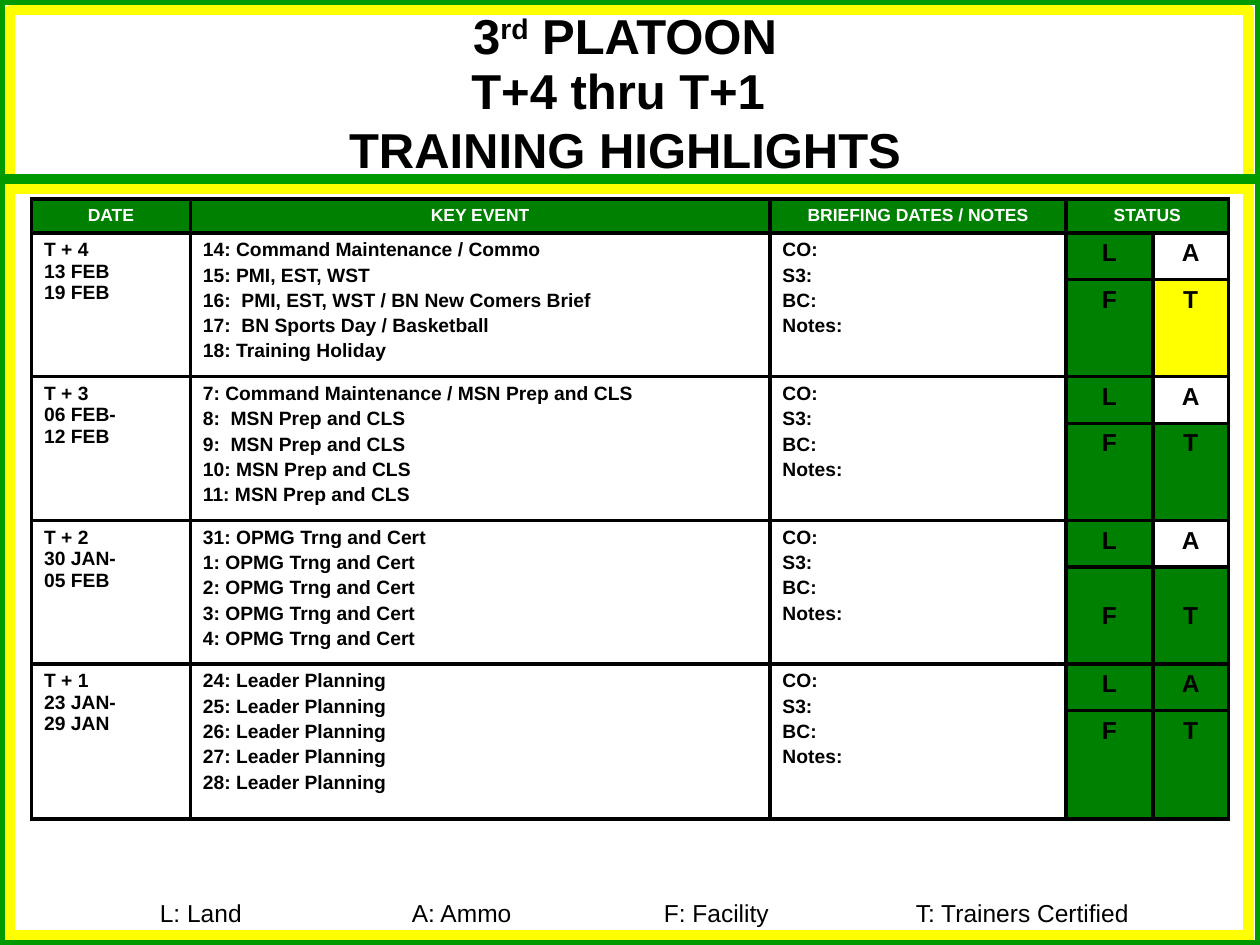
from lxml.etree import SubElement
from pptx import Presentation
from pptx.dml.color import RGBColor
from pptx.enum.shapes import MSO_CONNECTOR, MSO_SHAPE
from pptx.enum.text import MSO_ANCHOR, PP_ALIGN
from pptx.oxml.ns import qn
from pptx.util import Inches, Pt

COLORS = {"black": "000000", "white": "FFFFFF", "yellow": "FFFF00",
          "frame": "009900", "green": "008000"}

FRAMES = [((0.08, 0.08, 9.83, 7.42), "yellow"), ((0, 0, 10, 7.5), "frame")]
RULES = [(0.08, 9.92, 7.42, "yellow"), (0.08, 9.92, 1.5, "yellow"), (0, 10, 1.42, "frame")]

LEGEND = ["L: Land", "A: Ammo", "F: Facility", "T: Trainers Certified"]
HEADERS = ["DATE", "KEY EVENT", "BRIEFING DATES / NOTES", "STATUS"]
NOTES = ["CO:", "S3:", "BC:", "Notes:"]
STATUS_LETTERS = ["L", "A", "F", "T"]
# dates, key events, fills of L A F T, anchor of the lower status cells
WEEKS = [
    (["T + 4", "13 FEB", "19 FEB"],
     ["14: Command Maintenance / Commo", "15: PMI, EST, WST",
      "16:  PMI, EST, WST / BN New Comers Brief",
      "17:  BN Sports Day / Basketball", "18: Training Holiday"],
     ["green", None, "green", "yellow"], MSO_ANCHOR.TOP),
    (["T + 3", "06 FEB-", "12 FEB"],
     ["7: Command Maintenance / MSN Prep and CLS", "8:  MSN Prep and CLS",
      "9:  MSN Prep and CLS", "10: MSN Prep and CLS", "11: MSN Prep and CLS"],
     ["green", None, "green", "green"], MSO_ANCHOR.TOP),
    (["T + 2", "30 JAN-", "05 FEB"],
     [f"{day}: OPMG Trng and Cert" for day in (31, 1, 2, 3, 4)],
     ["green", "white", "green", "green"], MSO_ANCHOR.MIDDLE),
    (["T + 1", "23 JAN-", "29 JAN"],
     [f"{day}: Leader Planning" for day in range(24, 29)],
     ["green", "green", "green", "green"], MSO_ANCHOR.TOP),
]
COLUMN_WIDTHS = [1.26, 4.6, 2.35, 0.69, 0.6]
ROW_HEIGHTS = [0.27] + [0.37, 0.77] * 3 + [0.37, 0.86]


def rgb(name):
    return RGBColor.from_string(COLORS[name])


def add_run(paragraph, text, size, color="black", bold=True):
    run = paragraph.add_run()
    run.text = text
    run.font.name = "Arial"
    run.font.size = Pt(size)
    run.font.bold = bold
    run.font.color.rgb = rgb(color)
    return run


def add_text_box(slide, left, top, width, height):
    box = slide.shapes.add_textbox(Inches(left), Inches(top), Inches(width), Inches(height))
    box.text_frame.word_wrap = True
    return box.text_frame


def add_borders(cell):
    properties = cell._tc.get_or_add_tcPr()
    for position, side in enumerate(("a:lnL", "a:lnR", "a:lnT", "a:lnB")):
        line = properties.makeelement(qn(side), {"w": str(Pt(2.25))})
        fill = SubElement(line, qn("a:solidFill"))
        SubElement(fill, qn("a:srgbClr"), val=COLORS["black"])
        properties.insert(position, line)


def fill_cell(cell, lines, size, fill=None, color="black", align=PP_ALIGN.LEFT,
              space=0, anchor=MSO_ANCHOR.TOP):
    cell.vertical_anchor = anchor
    if fill:
        cell.fill.solid()
        cell.fill.fore_color.rgb = rgb(fill)
    for index, line in enumerate(lines):
        frame = cell.text_frame
        paragraph = frame.add_paragraph() if index else frame.paragraphs[0]
        paragraph.alignment = align
        if index and space:
            paragraph.space_before = Pt(space)
        add_run(paragraph, line, size, color)


def add_frame(slide):
    for place, color in FRAMES:
        frame = slide.shapes.add_shape(MSO_SHAPE.RECTANGLE, *map(Inches, place))
        frame.shadow.inherit = False
        frame.fill.background()
        frame.line.color.rgb = rgb(color)
        frame.line.width = Pt(6)
    for start, end, y, color in RULES:
        rule = slide.shapes.add_connector(
            MSO_CONNECTOR.STRAIGHT, Inches(start), Inches(y), Inches(end), Inches(y))
        rule.line.color.rgb = rgb(color)
        rule.line.width = Pt(6)
        SubElement(rule._element.spPr, qn("a:effectLst"))


def add_title(slide):
    frame = add_text_box(slide, 1.75, 0.19, 6.42, 1.28)
    frame.vertical_anchor = MSO_ANCHOR.MIDDLE
    platoon = frame.paragraphs[0]
    platoon.line_spacing = 0.5
    add_run(platoon, "3", 28)
    add_run(platoon, "rd", 28).font._element.set("baseline", "30000")
    add_run(platoon, " PLATOON", 28)
    highlights = frame.add_paragraph()
    add_run(highlights, "T+4 thru T+1 ", 28)
    highlights.add_line_break()
    add_run(highlights, "TRAINING HIGHLIGHTS", 28)
    for paragraph in frame.paragraphs:
        paragraph.alignment = PP_ALIGN.CENTER


def add_legend(slide):
    paragraph = add_text_box(slide, 1.17, 7.08, 8.08, 0.34).paragraphs[0]
    tabs = SubElement(paragraph._p.get_or_add_pPr(), qn("a:tabLst"))
    for index in range(1, len(LEGEND)):
        SubElement(tabs, qn("a:tab"), pos=str(Inches(2 * index)), algn="l")
    add_run(paragraph, "\t".join(LEGEND), 14, bold=False)


def add_schedule(slide):
    table = slide.shapes.add_table(
        len(ROW_HEIGHTS), len(COLUMN_WIDTHS), Inches(0.25), Inches(1.58),
        Inches(sum(COLUMN_WIDTHS)), Inches(sum(ROW_HEIGHTS))).table
    table.first_row = table.horz_banding = False
    for column, width in zip(table.columns, COLUMN_WIDTHS):
        column.width = Inches(width)
    for row, height in zip(table.rows, ROW_HEIGHTS):
        row.height = Inches(height)
    for cell in table.iter_cells():
        cell.fill.background()
        add_borders(cell)

    table.cell(0, 3).merge(table.cell(0, 4))
    for column, header in enumerate(HEADERS):
        fill_cell(table.cell(0, column), [header], 10, "green", "white", PP_ALIGN.CENTER)

    for week, (dates, events, fills, lower_anchor) in enumerate(WEEKS):
        top = 1 + 2 * week
        for column, (lines, space) in enumerate([(dates, 0), (events, 2.2), (NOTES, 2.2)]):
            cell = table.cell(top, column)
            cell.merge(table.cell(top + 1, column))
            fill_cell(cell, lines, 11, space=space)
        for index, (letter, fill) in enumerate(zip(STATUS_LETTERS, fills)):
            down, across = divmod(index, 2)
            fill_cell(table.cell(top + down, 3 + across), [letter], 14, fill,
                      align=PP_ALIGN.CENTER,
                      anchor=lower_anchor if down else MSO_ANCHOR.TOP)


def main():
    presentation = Presentation()
    presentation.slide_width = Inches(10)
    presentation.slide_height = Inches(7.5)
    slide = presentation.slides.add_slide(presentation.slide_layouts[6])
    add_frame(slide)
    add_title(slide)
    add_legend(slide)
    add_schedule(slide)
    presentation.save("out.pptx")


if __name__ == "__main__":
    main()
